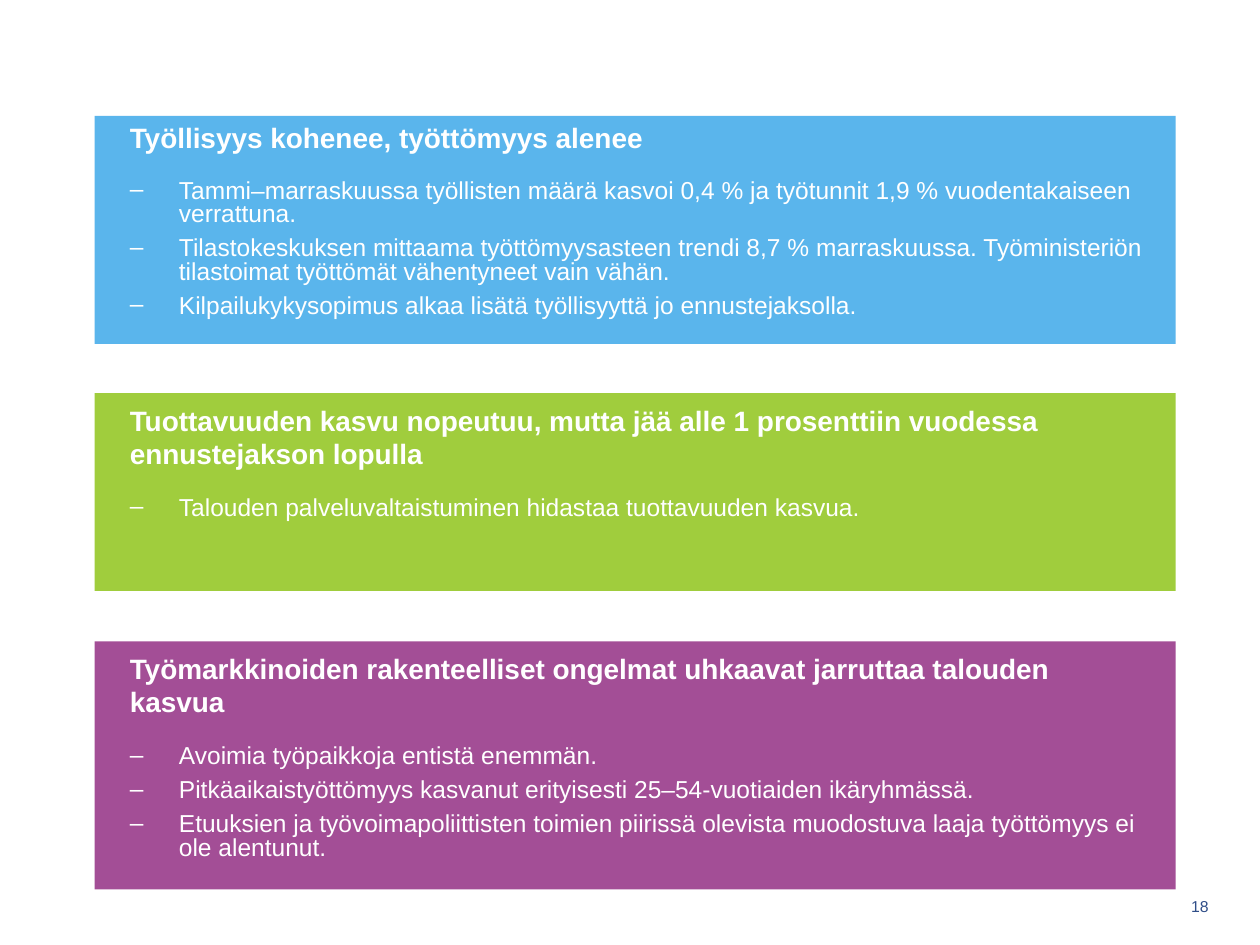
from lxml import etree
from pptx import Presentation
from pptx.dml.color import RGBColor
from pptx.enum.shapes import MSO_SHAPE
from pptx.enum.text import MSO_ANCHOR, PP_ALIGN
from pptx.oxml.ns import qn
from pptx.util import Inches, Pt

RECT = MSO_SHAPE.RECTANGLE
TOP, MIDDLE = MSO_ANCHOR.TOP, MSO_ANCHOR.MIDDLE
LEFT, RIGHT = PP_ALIGN.LEFT, PP_ALIGN.RIGHT
FONT = "Arial"
WHITE, NAVY = "FFFFFF", "304E88"
PANEL_LEFT, PANEL_WIDTH = 0.75, 8.58
HEADING_RISE = 0.08  # heading box starts this far above its panel
BULLET_INDENT = 0.39

# Top, height, space above the bullets, colour, heading, bullets
PANELS = [
    (0.92, 1.81, 0.51, "5AB5EC", "Työllisyys kohenee, työttömyys alenee", [
        "Tammi‒marraskuussa työllisten määrä kasvoi 0,4 % ja työtunnit 1,9 % "
        "vuodentakaiseen verrattuna.",
        "Tilastokeskuksen mittaama työttömyysasteen trendi 8,7 % marraskuussa. "
        "Työministeriön tilastoimat työttömät vähentyneet vain vähän.",
        "Kilpailukykysopimus alkaa lisätä työllisyyttä jo ennustejaksolla.",
    ]),
    (3.12, 1.57, 0.83, "A0CD3D",
     "Tuottavuuden kasvu nopeutuu, mutta jää alle 1 prosenttiin vuodessa "
     "ennustejakson lopulla", [
         "Talouden palveluvaltaistuminen hidastaa tuottavuuden kasvua.",
     ]),
    (5.09, 1.97, 0.83, "A34E96",
     "Työmarkkinoiden rakenteelliset ongelmat uhkaavat jarruttaa talouden kasvua", [
         "Avoimia työpaikkoja entistä enemmän.",
         "Pitkäaikaistyöttömyys kasvanut erityisesti 25‒54-vuotiaiden ikäryhmässä.",
         "Etuuksien ja työvoimapoliittisten toimien piirissä olevista muodostuva "
         "laaja työttömyys ei ole alentunut.",
     ]),
]


def rgb(value):
    return RGBColor.from_string(value)


def set_frame(tf, insets, anchor=TOP):
    tf.word_wrap = True
    tf.vertical_anchor = anchor
    tf.margin_left, tf.margin_top, tf.margin_right, tf.margin_bottom = map(Inches, insets)


def set_font(p, size, color, bold=False):
    for r in p.runs:
        r.font.name = FONT
        r.font.size = Pt(size)
        r.font.bold = bold
        r.font.color.rgb = rgb(color)


def add_dash(p):
    pPr = p._p.get_or_add_pPr()
    pPr.set("marL", str(Inches(BULLET_INDENT)))
    pPr.set("indent", str(-Inches(BULLET_INDENT)))
    etree.SubElement(pPr, qn("a:buFont")).set("typeface", FONT)
    etree.SubElement(pPr, qn("a:buChar")).set("char", "‒")


def add_panel(s, top, height, inset_top, color, bullets):
    sp = s.shapes.add_shape(RECT, Inches(PANEL_LEFT), Inches(top),
                            Inches(PANEL_WIDTH), Inches(height))
    sp.shadow.inherit = False
    sp.fill.solid()
    sp.fill.fore_color.rgb = rgb(color)
    sp.line.fill.background()
    tf = sp.text_frame
    set_frame(tf, (0.28, inset_top, 0.2, 0.2))
    tf.text = "\n".join(bullets)
    for p in tf.paragraphs:
        add_dash(p)
        p.alignment = LEFT
        p.line_spacing = 0.8
        p.space_after = Pt(6)
        set_font(p, 14, WHITE)


def add_text(s, box, text, size, color, insets, bold=False, align=LEFT, anchor=TOP):
    tf = s.shapes.add_textbox(*map(Inches, box)).text_frame
    set_frame(tf, insets, anchor)
    tf.text = text
    p = tf.paragraphs[0]
    p.alignment = align
    set_font(p, size, color, bold)


def main():
    prs = Presentation()
    prs.slide_width, prs.slide_height = Inches(10), Inches(7.5)
    s = prs.slides.add_slide(prs.slide_layouts[6])

    # Coloured panels with their headings
    for top, height, inset_top, color, heading, bullets in PANELS:
        add_panel(s, top, height, inset_top, color, bullets)
        add_text(s, (PANEL_LEFT, top - HEADING_RISE, PANEL_WIDTH, 0.55), heading,
                 16, WHITE, (0.28, 0.16, 0.2, 0.2), bold=True)

    # Slide number
    add_text(s, (9.17, 7.03, 0.52, 0.32), "18", 9, NAVY, (0.1, 0.05, 0.1, 0.05),
             align=RIGHT, anchor=MIDDLE)

    prs.save("out.pptx")


if __name__ == "__main__":
    main()
